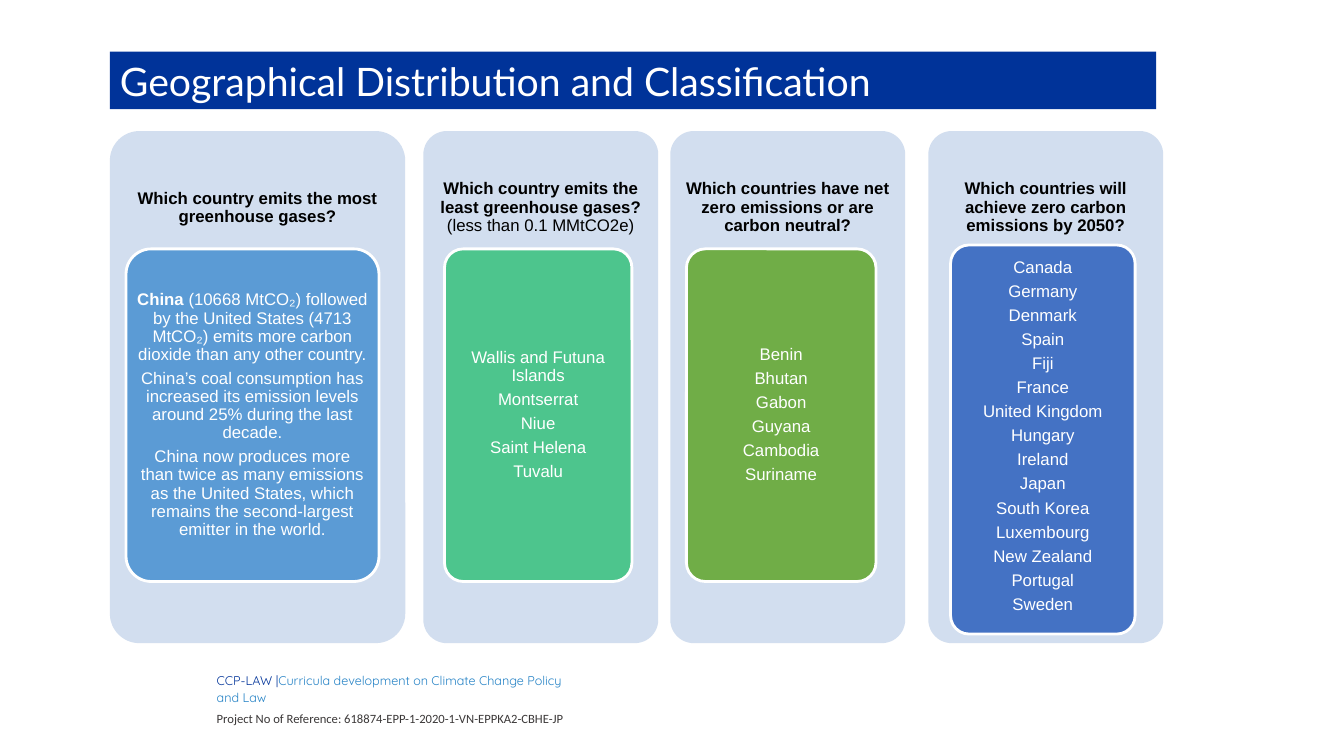
from pptx import Presentation
from pptx.dml.color import RGBColor
from pptx.enum import shapes, text
from pptx.util import Pt

TITLE = "Geographical Distribution and Classification"
FOOTER = [
    [("CCP-LAW |", "navy", "Quicksand"),
     ("Curricula development on Climate Change Policy and Law", "sky", "Quicksand")],
    [("Project No of Reference: 618874-EPP-1-2020-1-VN-EPPKA2-CBHE-JP", "gray", "Calibri")],
]
COLUMNS = [
    {
        "panel": (78.5, 211), "card": (90, 180.7, 177.8, 237.6), "fill": "blue", "foot": 2.2,
        "heading": [("Which country emits the most greenhouse gases?", True)],
        "lines": [
            [("China ", True), ("(10668 MtCO₂) followed by the United States (4713 MtCO₂) "
                                "emits more carbon dioxide than any other country.", False)],
            "China’s coal consumption has increased its emission levels around 25% "
            "during the last decade.",
            "China now produces more than twice as many emissions as the United States, "
            "which remains the second-largest emitter in the world.",
        ],
    },
    {
        "panel": (302.4, 167.8), "card": (317.5, 133.9, 177.8, 237.6), "fill": "mint", "foot": 2.2,
        "heading": [("Which country emits the least greenhouse gases? ", True),
                    ("(less than 0.1 MMtCO2e)", False)],
        "lines": ["Wallis and Futuna Islands", "Montserrat", "Niue", "Saint Helena", "Tuvalu"],
    },
    {
        "panel": (478.8, 167.8), "card": (490.3, 135.4, 177.8, 237.6), "fill": "green", "foot": 2.2,
        "heading": [("Which countries have net zero emissions or are carbon neutral?", True)],
        "lines": ["Benin", "Bhutan", "Gabon", "Guyana", "Cambodia", "Suriname"],
    },
    {
        "panel": (663.1, 167.8), "card": (679, 131.8, 175, 277.9), "fill": "indigo", "foot": 6.5,
        "heading": [("Which countries will achieve zero carbon emissions by 2050?", True)],
        "lines": ["Canada", "Germany", "Denmark", "Spain", "Fiji", "France", "United Kingdom",
                  "Hungary", "Ireland", "Japan", "South Korea", "Luxembourg", "New Zealand",
                  "Portugal", "Sweden"],
    },
]
THEME = {
    "navy": "003399", "sky": "2683C6", "gray": "3B3838", "white": "FFFFFF", "black": "000000",
    "panel": "D2DEEF", "blue": "5B9BD5", "mint": "4DC58D", "green": "70AD47", "indigo": "4472C4",
    "title": 28, "body": 12, "small": 9,
}
PANEL_TOP, PANEL_HEIGHT, HEADING_HEIGHT = 93.6, 365.8, 109.4


def color(name):
    return RGBColor.from_string(THEME[name])


def write(frame, paragraphs, size="body", align="CENTER", spacing=0.9,
          before=0, after=0, margins=(3.6, 3.6, 3.6, 3.6)):
    frame.word_wrap = True
    frame.vertical_anchor = text.MSO_ANCHOR.MIDDLE
    for side, margin in zip(("left", "top", "right", "bottom"), margins):
        setattr(frame, "margin_" + side, Pt(margin))
    write_paragraphs(frame, paragraphs, size, align, spacing, before, after)


def write_paragraphs(frame, paragraphs, size, align, spacing, before=0, after=0):
    for index, spans in enumerate(paragraphs):
        para = frame.add_paragraph() if index else frame.paragraphs[0]
        para.alignment = getattr(text.PP_ALIGN, align)
        para.line_spacing = spacing
        para.space_before = Pt(before if index else 0)
        para.space_after = Pt(after)
        for words, shade, font, bold in spans:
            span = para.add_run()
            span.text = words
            span.font.name = font
            span.font.size = Pt(THEME[size])
            span.font.bold = bold
            span.font.color.rgb = color(shade)


def add_round_box(page, left, top, width, height, fill, outlined=False):
    box = page.shapes.add_shape(shapes.MSO_SHAPE.ROUNDED_RECTANGLE,
                                Pt(left), Pt(top), Pt(width), Pt(height))
    box.adjustments[0] = 0.1
    box.shadow.inherit = False
    box.fill.solid()
    box.fill.fore_color.rgb = color(fill)
    if outlined:
        box.line.color.rgb = color("white")
        box.line.width = Pt(2)
    else:
        box.line.fill.background()
    return box


def add_title(page):
    title = page.shapes.title
    title.left, title.top, title.width, title.height = Pt(78.5), Pt(36.9), Pt(747.4), Pt(41)
    title.fill.solid()
    title.fill.fore_color.rgb = color("navy")
    title.text_frame.auto_size = text.MSO_AUTO_SIZE.NONE
    write(title.text_frame, [[(TITLE, "white", "Lato", False)]], size="title",
          align="LEFT", spacing=1.0, margins=(7.2, 3.6, 7.2, 3.6))


def add_column(page, column):
    left, width = column["panel"]
    add_round_box(page, left, PANEL_TOP, width, PANEL_HEIGHT, "panel")
    heading = page.shapes.add_textbox(Pt(left), Pt(PANEL_TOP), Pt(width), Pt(HEADING_HEIGHT))
    write(heading.text_frame,
          [[(words, "black", "Arial", bold) for words, bold in column["heading"]]], after=4.2)

    left, width, top, height = column["card"]
    card = add_round_box(page, left, top, width, height, column["fill"], outlined=True)
    lines = [[(line, False)] if isinstance(line, str) else line for line in column["lines"]]
    write(card.text_frame,
          [[(words, "white", "Arial", bold) for words, bold in line] for line in lines],
          after=4.2, margins=(2.2, 2.2, 2.2, column["foot"]))


def add_footer(page):
    table = page.shapes.add_table(1, 2, Pt(93.6), Pt(480.2), Pt(325.4), Pt(37.4)).table
    table.first_row = table.horz_banding = False
    for index, width in enumerate((56.2, 269.2)):
        table.columns[index].width = Pt(width)
        table.cell(0, index).fill.background()
    cell = table.cell(0, 1)
    cell.vertical_anchor = text.MSO_ANCHOR.MIDDLE
    cell.margin_left = cell.margin_right = Pt(5)
    cell.margin_top = cell.margin_bottom = Pt(0)
    write_paragraphs(cell.text_frame, [[(*span, False) for span in line] for line in FOOTER],
                     "small", "LEFT", 1.07, before=3)


def main():
    deck = Presentation()
    deck.slide_width, deck.slide_height = Pt(960), Pt(540)
    page = deck.slides.add_slide(deck.slide_layouts[5])
    add_footer(page)
    add_title(page)
    for column in COLUMNS:
        add_column(page, column)
    deck.save("out.pptx")


if __name__ == "__main__":
    main()
